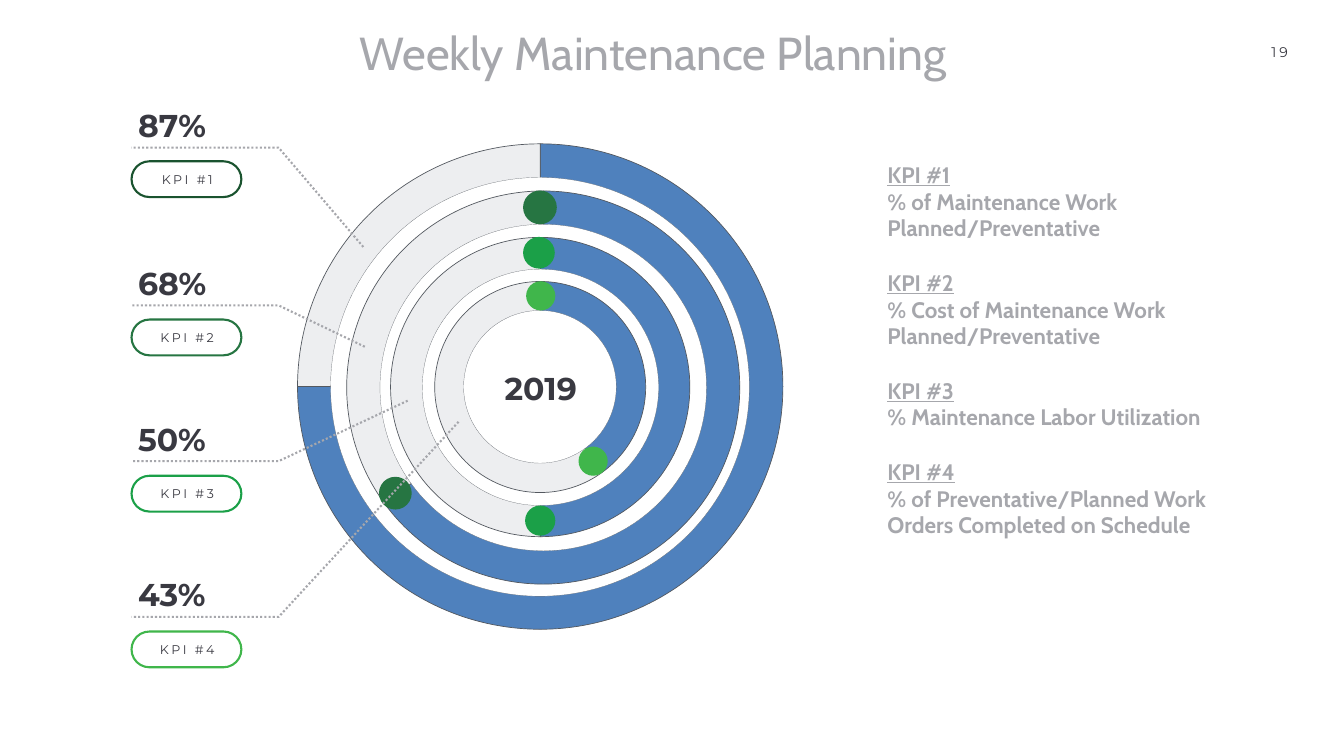
from lxml.etree import SubElement
from pptx import Presentation
from pptx.chart.data import CategoryChartData
from pptx.dml.color import RGBColor
from pptx.enum.chart import XL_CHART_TYPE
from pptx.enum.dml import MSO_LINE
from pptx.enum.shapes import MSO_SHAPE
from pptx.enum.text import MSO_ANCHOR, PP_ALIGN
from pptx.oxml import parse_xml
from pptx.oxml.ns import nsdecls, qn
from pptx.util import Pt

PX = 9144  # 100 px to the inch

WHITE = RGBColor(0xFF, 0xFF, 0xFF)
DARK = RGBColor(0x39, 0x39, 0x41)
GREY = RGBColor(0xA6, 0xA7, 0xAC)
PALE = RGBColor(0xED, 0xEE, 0xF0)
EDGE = RGBColor(0x53, 0x58, 0x5F)
PINE = RGBColor(0x1A, 0x53, 0x2F)
MOSS = RGBColor(0x26, 0x75, 0x42)
JADE = RGBColor(0x1B, 0xA0, 0x48)
LIME = RGBColor(0x40, 0xB6, 0x4B)

TITLE = dict(name="Cabin", size=Pt(66), color=GREY)
BODY = dict(name="Cabin", size=Pt(32), bold=True, color=GREY)
HEAD = dict(BODY, underline=True)
BIG = dict(name="Montserrat", size=Pt(45), bold=True, color=DARK)
TAG = dict(name="Montserrat", size=Pt(18), color=DARK)
PAGE = dict(TAG, size=Pt(20))
TICK = dict(name="Montserrat", size=Pt(10), color=GREY)

CLEAR = f"<c:spPr {nsdecls('c', 'a')}><a:noFill/><a:ln><a:noFill/></a:ln></c:spPr>"


def style(font, form):
    for key, val in form.items():
        if key == "color":
            font.color.rgb = val
        else:
            setattr(font, key, val)


def paint(form, fill, line=None, width=0):
    if fill is None:
        form.fill.background()
    else:
        form.fill.solid()
        form.fill.fore_color.rgb = fill
    if line is None:
        form.line.fill.background()
    else:
        form.line.color.rgb = line
        form.line.width = Pt(width)


class Page:
    def __init__(self, deck):
        self.shapes = deck.slides.add_slide(deck.slide_layouts[6]).shapes

    def text(self, box, rows, inset=4, gap=0, para=None, space=0,
             anchor=MSO_ANCHOR.TOP):
        """Each row is (words, font format); underlined rows open a block."""
        frame = self.shapes.add_textbox(*[v * PX for v in box]).text_frame
        sides = dict(margin_left=inset * PX, margin_right=4 * PX,
                     margin_top=4 * PX, margin_bottom=4 * PX)
        for key, val in dict(sides, word_wrap=True, vertical_anchor=anchor).items():
            setattr(frame, key, val)
        for i, (words, form) in enumerate(rows):
            par = frame.add_paragraph() if i else frame.paragraphs[0]
            for key, val in (para or {}).items():
                setattr(par, key, val)
            if i and form.get("underline"):
                par.space_before = Pt(gap)
            run = par.add_run()
            run.text = words
            style(run.font, form)
            if space:
                run.font._element.set("spc", str(space))

    def shape(self, kind, box, fill, line=None, width=0):
        item = self.shapes.add_shape(kind, *[v * PX for v in box])
        item.shadow.inherit = False
        paint(item, fill, line, width)
        return item

    def disc(self, mid, size, fill, line=None, width=0):
        box = [round(v - size / 2) for v in mid] + [size, size]
        self.shape(MSO_SHAPE.OVAL, box, fill, line, width)

    def pill(self, box, line):
        self.shape(MSO_SHAPE.ROUNDED_RECTANGLE, box, None, line, 3).adjustments[0] = 0.5

    def lead(self, start, *rest):
        pen = self.shapes.build_freeform(*[v * PX for v in start], scale=1)
        pen.add_line_segments([(x * PX, y * PX) for x, y in rest], close=False)
        item = pen.convert_to_shape()
        item.shadow.inherit = False
        paint(item, None, GREY, 3)
        item.line.dash_style = MSO_LINE.ROUND_DOT

    def pie(self, mid, size, share, color):
        data = CategoryChartData()
        data.categories = ["1", "2"]
        data.add_series("Series 1", (share, 100 - share))
        spot = [round((v - size / 2) * PX) for v in mid]
        chart = self.shapes.add_chart(
            XL_CHART_TYPE.PIE, *spot, size * PX, size * PX, data).chart
        chart.has_title = chart.has_legend = False
        style(chart.font, TICK)
        plot = chart.plots[0]
        plot.vary_by_categories = False
        ring = plot.series[0]
        paint(ring.format, color, EDGE, 1)
        paint(ring.points[1].format, PALE, EDGE, 1)

        # Fill the frame with the pie and keep its corners clear
        root = chart._chartSpace
        area = root.find(".//" + qn("c:plotArea"))
        for old in area.findall(qn("c:layout")):
            area.remove(old)
        area.insert(0, parse_xml(f"<c:layout {nsdecls('c')}/>"))
        rule = SubElement(area[0], qn("c:manualLayout"))
        for key, val in dict(layoutTarget="inner", xMode="edge", yMode="edge",
                             x=0.005, y=0.005, w=0.99, h=0.99).items():
            SubElement(rule, qn("c:" + key)).set("val", str(val))
        area.append(parse_xml(CLEAR))
        root.find(qn("c:chart")).addnext(parse_xml(CLEAR))


def main():
    deck = Presentation()
    deck.slide_width, deck.slide_height = 2667 * PX, 1500 * PX
    page = Page(deck)

    # Page number and title
    page.text((2519, 83, 66, 42), [("19", PAGE)], space=400)
    page.text((709, 44, 1248, 119), [("Weekly Maintenance Planning", TITLE)],
              para=dict(alignment=PP_ALIGN.JUSTIFY), anchor=MSO_ANCHOR.MIDDLE)

    # KPI notes
    notes = ["% of Maintenance Work Planned/Preventative",
             "% Cost of Maintenance Work Planned/Preventative",
             "% Maintenance Labor Utilization",
             "% of Preventative/Planned Work Orders Completed on Schedule"]
    rows = []
    for num, note in enumerate(notes, 1):
        rows += [(f"KPI #{num}", HEAD), (note, BODY)]
    page.text((1757, 315, 676, 676), rows, gap=39)

    # Rings: centre, outer size, hole size, share, colour
    rings = [((1072, 767), 973, 831, 75, PINE),
             ((1078, 769), 788, 648, 65, MOSS),
             ((1072, 768), 600, 469, 50, JADE),
             ((1072, 768), 423, 303, 40, LIME)]
    for mid, size, hole, share, color in rings:
        page.pie(mid, size, share, color)
        page.disc(mid, hole, WHITE, EDGE, 0.25)

    # Round ends of the arcs
    caps = [((1072, 412), 67, MOSS), ((1070, 502), 63, JADE),
            ((1073, 587), 58, LIME), ((1177, 915), 58, LIME),
            ((1072, 1033), 60, JADE), ((784, 978), 65, MOSS)]
    for cap in caps:
        page.disc(*cap)
    page.text((920, 742, 306, 126), [("2019", BIG)],
              para=dict(alignment=PP_ALIGN.CENTER, line_spacing=0.8))

    # Callouts: value, pointer tip, line level, pill top, colour
    calls = [("87%", (721, 490), 293, 320, PINE),
             ("68%", (724, 688), 606, 634, MOSS),
             ("50%", (809, 795), 915, 944, JADE),
             ("43%", (910, 837), 1224, 1253, LIME)]
    for num, (value, tip, level, top, color) in enumerate(calls, 1):
        page.lead(tip, (553, level), (261, level))
        page.text((253, level - 72, 346, 125), [(value, BIG)], inset=21,
                  para=dict(line_spacing=0.8))
        page.pill((261, top, 218, 71), color)
        page.text((281, top + 16, 181, 39), [(f"KPI #{num}", TAG)], space=360,
                  para=dict(alignment=PP_ALIGN.CENTER), anchor=MSO_ANCHOR.MIDDLE)

    deck.save("out.pptx")


if __name__ == "__main__":
    main()
